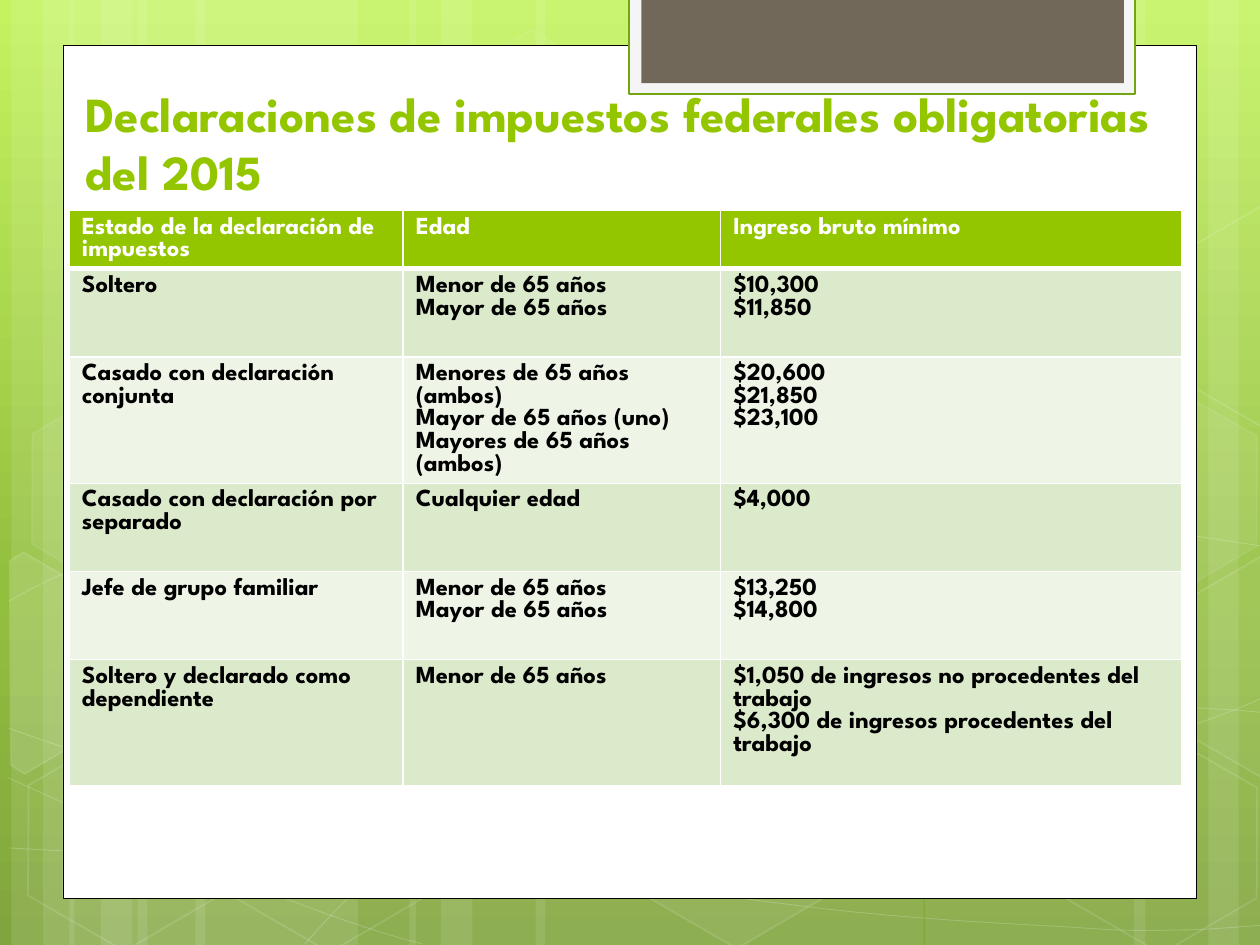
import math

from lxml import etree
from pptx import Presentation
from pptx import util as u
from pptx.dml.color import RGBColor
from pptx.enum import shapes, text
from pptx.oxml import parse_xml
from pptx.oxml.ns import nsdecls, qn

# The slide is a grid of 10 columns by 7.5 rows with square cells.
COLUMNS, ROWS = 10, 7.5
CELL = u.Inches(1)
FINE = 1000  # outline units per cell

WHITE = RGBColor(0xFF, 0xFF, 0xFF)
BLACK = RGBColor(0, 0, 0)
LIME = RGBColor(0x94, 0xC6, 0x00)
BAND_DARK = RGBColor(0xDC, 0xEA, 0xCC)
BAND_LIGHT = RGBColor(0xEE, 0xF5, 0xE7)
TAB_FRAME = RGBColor(0xF5, 0xF5, 0xF5)
TAB_EDGE = RGBColor(0x74, 0xA5, 0x10)
TAB_CORE = RGBColor(0x71, 0x68, 0x5A)
SKY = ((0, RGBColor(0xC3, 0xF3, 0x5F)), (62, RGBColor(0x93, 0xBF, 0x3F)),
       (100, RGBColor(0x81, 0xA5, 0x3E)))
FONT = "League Spartan"

# Left, width and rotation of the full-height stripes
STRIPES = [(left + shift, width, 0) for shift in (0, 0.46)
           for left, width in ((1.09, 1.75), (0.09, 0.5), (0.34, 0.83))]
STRIPES += [(7.34, 1.75, 180), (9.59, 0.5, 180), (9, 0.83, 180),
            (4.25, 3.08, 0), (3.25, 0.5, 0), (3.5, 0.83, 0)]

# Each wave is a chain of cubic curves: a start, then three points per curve
WAVES = [
    [(0.07, 6.73), (0.61, 6.76), (1.15, 6.79), (1.9, 6.78), (2.65, 6.77), (3.58, 6.75),
     (4.58, 6.65), (5.58, 6.55), (7, 6.36), (7.92, 6.17), (8.83, 5.98), (9.77, 5.68),
     (10.07, 5.51)],
    [(0.07, 4.77), (0.36, 4.61), (0.65, 4.46), (1.21, 4.31), (1.78, 4.16), (2.59, 3.94),
     (3.47, 3.87), (4.36, 3.8), (5.44, 3.79), (6.54, 3.87), (7.64, 3.95), (9.47, 4.26),
     (10.07, 4.34)],
    [(0.06, 6.17), (1.27, 6.72), (2.47, 7.27), (3.35, 7.49)],
    [(0.07, 5.78), (0.38, 5.89), (0.7, 6), (1.28, 6.16), (1.86, 6.31), (2.73, 6.56),
     (3.57, 6.73), (4.4, 6.9), (5.45, 7.08), (6.28, 7.18), (7.11, 7.29), (8, 7.33),
     (8.53, 7.36), (9.06, 7.4), (9.19, 7.38), (9.45, 7.38), (9.71, 7.37), (9.89, 7.35),
     (10.07, 7.34)],
    [(2.42, 7.49), (2.6, 7.29), (2.78, 7.09), (3.02, 6.91), (3.26, 6.72), (3.6, 6.53),
     (3.88, 6.39), (4.16, 6.25), (4.33, 6.19), (4.69, 6.09), (5.06, 5.99), (5.73, 5.85),
     (6.08, 5.78), (6.44, 5.71), (6.49, 5.71), (6.8, 5.69), (7.11, 5.66), (7.6, 5.63),
     (7.94, 5.62), (8.29, 5.61), (8.86, 5.62), (8.86, 5.62), (9.08, 5.62), (9.31, 5.62),
     (9.53, 5.62), (9.71, 5.63), (9.88, 5.64), (9.97, 5.65), (10.06, 5.66), (10.03, 5.65),
     (10.06, 5.66)],
]

# Left, top, fill opacity and edge opacity in percent
HEXAGONS = [(3.34, 0.36, 4, 8), (4.97, 5.89, 6, 12), (0.11, 5.91, None, 12),
            (0.14, 3.12, 7, 8), (1.74, 5.92, None, 12), (7.53, 4.53, 10, 12),
            (8.34, 5.93, None, 12), (8.34, 3.14, 7, 8)]
HEXAGON_TURN = 30

# Hexagons cut by the slide's edge: centre, corners as they show, fill opacity
CUT_RIGHT = [(9.26, 4.85), (10.02, 4.41), (10.09, 4.46), (10.09, 6.13),
             (10.02, 6.17), (9.26, 5.73)]
CUT_HEXAGONS = [
    ((0.36, 5.36), [(0.08, 4.45), (0.19, 4.38), (0.96, 4.83), (0.95, 5.7),
                    (0.2, 6.14), (0.09, 6.07)], 10),
    ((9.85, 5.2), CUT_RIGHT, 4),
    ((9.85, 2.41), [(x, y - 2.78) for x, y in CUT_RIGHT], None),
]

TABLE_COLUMNS = (2.65, 2.52, 3.66)
TABLE_ROWS = (0.44, 0.7, 1, 0.7, 0.7, 1)
FILING_RULES = [
    ("Estado de la declaración de impuestos", "Edad", "Ingreso bruto mínimo"),
    ("Soltero", "Menor de 65 años\nMayor de 65 años", "$10,300\n$11,850"),
    ("Casado con declaración conjunta",
     "Menores de 65 años (ambos)\nMayor de 65 años (uno)\nMayores de 65 años (ambos)",
     "$20,600\n$21,850\n$23,100"),
    ("Casado con declaración por separado", "Cualquier edad", "$4,000"),
    ("Jefe de grupo familiar", "Menor de 65 años\nMayor de 65 años", "$13,250\n$14,800"),
    ("Soltero y declarado como dependiente", "Menor de 65 años",
     "$1,050 de ingresos no procedentes del trabajo\n"
     "$6,300 de ingresos procedentes del trabajo"),
]


def grid(*cells):
    return [round(cell * CELL) for cell in cells]


def set_opacity(fill, percent):
    color = fill._xPr.find(qn("a:solidFill"))[0]
    etree.SubElement(color, qn("a:alpha"), val=str(percent * 1000))


def paint(shape, fill=None, edge=None, weight=1, fill_opacity=100, edge_opacity=100):
    shape.shadow.inherit = False
    for part, color, opacity in ((shape.fill, fill, fill_opacity),
                                 (shape.line.fill, edge, edge_opacity)):
        if color is None:
            part.background()
            continue
        part.solid()
        part.fore_color.rgb = color
        if opacity < 100:
            set_opacity(part, opacity)
    if edge is not None:
        shape.line.width = u.Pt(weight)


def add_box(slide, cells, kind=shapes.MSO_SHAPE.RECTANGLE, turn=0, **look):
    box = slide.shapes.add_shape(kind, *grid(*cells))
    box.rotation = turn
    paint(box, **look)
    return box


def add_outline(slide, points, close, **look):
    start, *rest = [(x * FINE, y * FINE) for x, y in points]
    builder = slide.shapes.build_freeform(*start, scale=CELL / FINE)
    builder.add_line_segments(rest, close=close)
    outline = builder.convert_to_shape()
    paint(outline, **look)
    return outline


def bend(outline):
    """Turn each three straight segments into one cubic curve."""
    segments = list(outline._element.iter(qn("a:lnTo")))
    for start in range(0, len(segments), 3):
        trio = segments[start:start + 3]
        curve = etree.Element(qn("a:cubicBezTo"))
        trio[0].addprevious(curve)
        for segment in trio:
            curve.append(segment[0])
            segment.getparent().remove(segment)


def turn_points(points, center, degrees):
    cos, sin = math.cos(math.radians(degrees)), math.sin(math.radians(degrees))
    cx, cy = center
    return [(cx + (x - cx) * cos - (y - cy) * sin, cy + (x - cx) * sin + (y - cy) * cos)
            for x, y in points]


def hexagon_look(fill_opacity, edge_opacity=12):
    look = {"edge": WHITE, "edge_opacity": edge_opacity}
    return look | ({"fill": WHITE, "fill_opacity": fill_opacity} if fill_opacity else {})


def write(frame, words, size, color, spacing):
    frame.word_wrap = True
    frame.text = words
    for paragraph in frame.paragraphs:
        paragraph.line_spacing = u.Pt(spacing)
        font = paragraph.runs[0].font
        font.name, font.size, font.bold = FONT, u.Pt(size), True
        font.color.rgb = color


def set_borders(cell, **weights):
    for side, weight in weights.items():
        cell._tc.get_or_add_tcPr().append(parse_xml(
            f'<a:ln{side} {nsdecls("a")} w="{u.Pt(weight)}"><a:solidFill>'
            f'<a:srgbClr val="{WHITE}"/></a:solidFill></a:ln{side}>'))


def add_background(slide):
    fill = slide.background.fill
    fill.gradient()
    fill.gradient_angle = 270
    stops = fill._fill._gradFill.find(qn("a:gsLst"))
    stops[:] = [parse_xml(f'<a:gs {nsdecls("a")} pos="{share * 1000}">'
                          f'<a:srgbClr val="{color}"/></a:gs>') for share, color in SKY]


def add_decoration(slide):
    for left, width, turn in STRIPES:
        add_box(slide, (left, 0, width, ROWS), turn=turn, fill=WHITE, fill_opacity=10)
    for wave in WAVES:
        bend(add_outline(slide, wave, False, edge=WHITE, weight=0.5, edge_opacity=20))
    for left, top, fill_opacity, edge_opacity in HEXAGONS:
        hexagon = add_box(slide, (left, top, 1.75, 1.52), shapes.MSO_SHAPE.HEXAGON,
                          HEXAGON_TURN, **hexagon_look(fill_opacity, edge_opacity))
        hexagon.adjustments[0] = 0.285
    for center, corners, fill_opacity in CUT_HEXAGONS:
        upright = turn_points(corners, center, -HEXAGON_TURN)
        add_outline(slide, upright, True, **hexagon_look(fill_opacity)).rotation = HEXAGON_TURN


def add_filing_table(slide):
    table = slide.shapes.add_table(len(TABLE_ROWS), len(TABLE_COLUMNS), *grid(
        0.55, 1.67, sum(TABLE_COLUMNS), sum(TABLE_ROWS))).table
    for column, width in zip(table.columns, grid(*TABLE_COLUMNS)):
        column.width = width
    for index, (row, height) in enumerate(zip(table.rows, grid(*TABLE_ROWS))):
        row.height = height
        header = index == 0
        band = LIME if header else BAND_DARK if index % 2 else BAND_LIGHT
        for cell, words in zip(row.cells, FILING_RULES[index]):
            write(cell.text_frame, words, 14, WHITE if header else BLACK, 13)
            set_borders(cell, L=1, R=1, T=3 if index == 1 else 1, B=3 if header else 1)
            cell.fill.solid()
            cell.fill.fore_color.rgb = band


def main():
    deck = Presentation()
    deck.slide_width, deck.slide_height = grid(COLUMNS, ROWS)
    slide = deck.slides.add_slide(deck.slide_layouts[6])
    add_background(slide)
    add_decoration(slide)
    add_box(slide, (0.5, 0.36, 9, 6.77), fill=WHITE, edge=BLACK, weight=0.5)
    add_box(slide, (4.99, -0.02, 4.02, 0.77), fill=TAB_FRAME, edge=TAB_EDGE, weight=1.25)
    add_box(slide, (5.09, -0.02, 3.83, 0.68), fill=TAB_CORE)
    title = slide.shapes.add_textbox(*grid(0.58, 0.81, 8.75, 0.83)).text_frame
    title.vertical_anchor = text.MSO_ANCHOR.BOTTOM
    write(title, "Declaraciones de impuestos federales obligatorias del 2015", 28, LIME, 33)
    add_filing_table(slide)
    deck.save("out.pptx")


if __name__ == "__main__":
    main()
